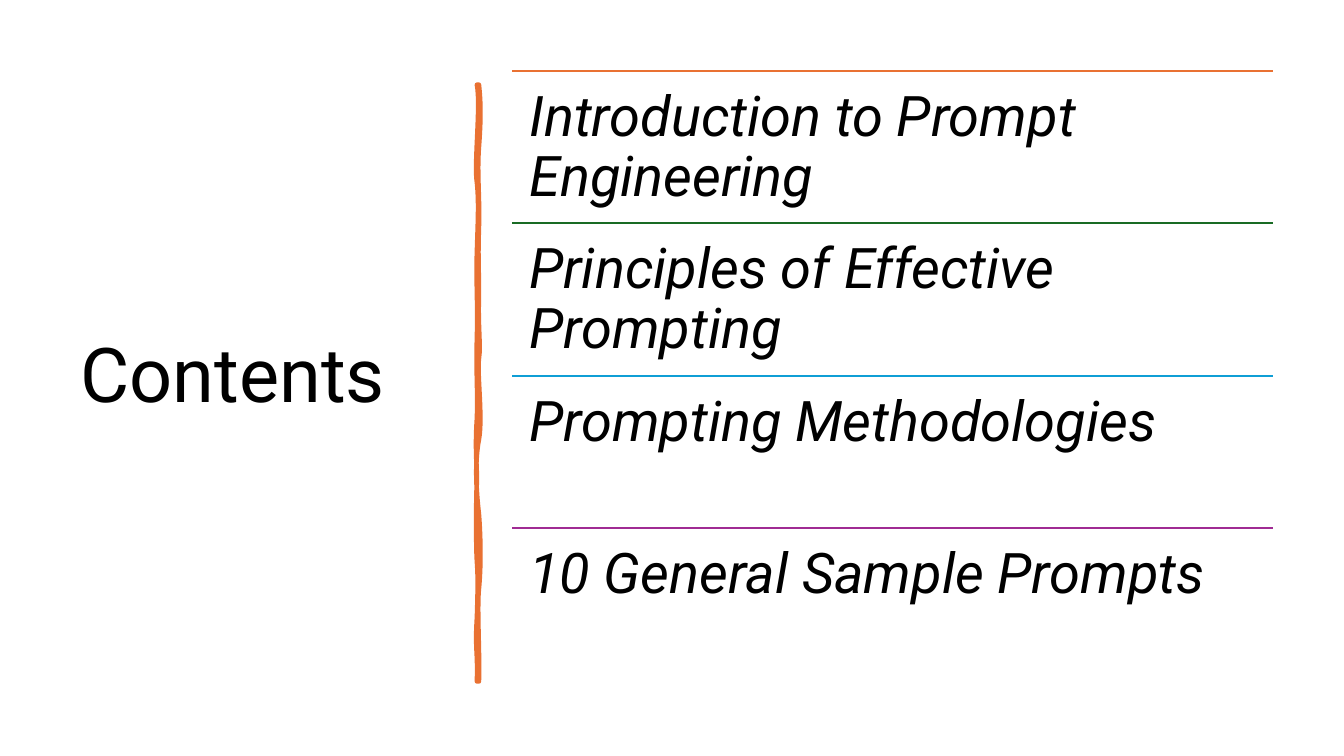
import math
from dataclasses import dataclass

import pptx
import pptx.dml.color
import pptx.enum.shapes
import pptx.enum.text
import pptx.oxml.ns
import pptx.presentation
import pptx.slide
import pptx.util
from lxml import etree

PX = 9144  # EMU; 100 px to the inch


@dataclass(frozen=True)
class Theme:
    font: str = "Roboto"
    text: str = "000000"
    accent: str = "E97132"
    title_size: int = 54
    topic_size: int = 40
    rule_width: float = 1.5
    divider_width: float = 3.25


@dataclass(frozen=True)
class Topic:
    label: str
    color: str


@dataclass(frozen=True)
class Curve:
    """A cubic piece of the divider's edge: two controls and an end, in px."""
    x1: int
    y1: int
    x2: int
    y2: int
    x: int
    y: int


THEME = Theme()

TOPICS = [
    Topic("Introduction to Prompt Engineering", THEME.accent),
    Topic("Principles of Effective Prompting", "196B24"),
    Topic("Prompting Methodologies", "0F9ED5"),
    Topic("10 General Sample Prompts", "A02B93"),
]
TOPICS_LEFT, TOPICS_TOP, TOPICS_WIDTH, TOPICS_HEIGHT = 508, 70, 755, 605
TOPIC_INSET = 17

DIVIDER_LEFT, DIVIDER_RIGHT, DIVIDER_TOP = 473, 475, 84
DIVIDER_EDGE = [
    Curve(477, 102, 477, 119, 475, 146),
    Curve(473, 173, 476, 195, 475, 226),
    Curve(474, 257, 475, 262, 475, 294),
    Curve(474, 325, 477, 342, 475, 356),
    Curve(473, 370, 479, 414, 475, 436),
    Curve(471, 457, 472, 484, 475, 510),
    Curve(477, 536, 477, 564, 475, 584),
    Curve(473, 603, 476, 650, 475, 676),
    Curve(474, 676, 473, 676, 473, 676),
    Curve(474, 646, 471, 644, 473, 613),
    Curve(474, 583, 474, 570, 473, 557),
    Curve(472, 544, 472, 495, 473, 477),
    Curve(473, 459, 471, 445, 473, 415),
    Curve(474, 386, 472, 373, 473, 335),
    Curve(474, 298, 472, 281, 473, 250),
    Curve(474, 218, 475, 200, 473, 181),
    Curve(470, 163, 477, 104, 473, 84),
]


def px(length: int) -> pptx.util.Emu:
    return pptx.util.Emu(length * PX)


def rgb(color: str) -> pptx.dml.color.RGBColor:
    return pptx.dml.color.RGBColor.from_string(color)


def add_text(slide: pptx.slide.Slide, text: str, left: int, top: int,
             width: int, height: int, *, size: int, inset_x: int = 10,
             inset_y: int = 5, italic: bool = False,
             anchor=pptx.enum.text.MSO_ANCHOR.TOP) -> None:
    frame = slide.shapes.add_textbox(
        px(left), px(top), px(width), px(height)).text_frame
    frame.word_wrap = True
    frame.vertical_anchor = anchor
    frame.margin_left = frame.margin_right = px(inset_x)
    frame.margin_top = frame.margin_bottom = px(inset_y)
    paragraph = frame.paragraphs[0]
    paragraph.line_spacing = 0.9
    run = paragraph.add_run()
    run.text = text
    run.font.name = THEME.font
    run.font.size = pptx.util.Pt(size)
    run.font.italic = italic
    run.font.color.rgb = rgb(THEME.text)


def add_rule(slide: pptx.slide.Slide, left: int, top: int, width: int,
             color: str) -> None:
    rule = slide.shapes.add_connector(
        pptx.enum.shapes.MSO_CONNECTOR.STRAIGHT,
        px(left), px(top), px(left + width), px(top))
    rule.line.color.rgb = rgb(color)
    rule.line.width = pptx.util.Pt(THEME.rule_width)
    etree.SubElement(rule.element.spPr, pptx.oxml.ns.qn("a:effectLst"))


def bend(segment: etree.ElementBase, curve: Curve) -> None:
    """Turn a straight outline segment into a cubic curve."""
    segment.tag = pptx.oxml.ns.qn("a:cubicBezTo")
    for point in list(segment):
        segment.remove(point)
    for x, y in ((curve.x1, curve.y1), (curve.x2, curve.y2),
                 (curve.x, curve.y)):
        etree.SubElement(segment, pptx.oxml.ns.qn("a:pt"),
                         x=str(px(x - DIVIDER_LEFT)),
                         y=str(px(y - DIVIDER_TOP)))


def add_divider(slide: pptx.slide.Slide) -> None:
    builder = slide.shapes.build_freeform(px(DIVIDER_RIGHT), px(DIVIDER_TOP))
    builder.add_line_segments(
        [(px(curve.x), px(curve.y)) for curve in DIVIDER_EDGE], close=False)
    builder.add_line_segments([], close=True)
    divider = builder.convert_to_shape()
    segments = list(divider.element.iter(pptx.oxml.ns.qn("a:lnTo")))
    for segment, curve in zip(segments, DIVIDER_EDGE):
        bend(segment, curve)
    for closing in segments[len(DIVIDER_EDGE):]:
        closing.getparent().remove(closing)
    divider.shadow.inherit = False
    divider.fill.solid()
    divider.fill.fore_color.rgb = rgb(THEME.accent)
    divider.line.color.rgb = rgb(THEME.accent)
    divider.line.width = pptx.util.Pt(THEME.divider_width)
    outline = divider.element.spPr.find(pptx.oxml.ns.qn("a:ln"))
    etree.SubElement(outline, pptx.oxml.ns.qn("a:round"))


def add_topics(slide: pptx.slide.Slide) -> None:
    row_height = TOPICS_HEIGHT / len(TOPICS)
    for row, topic in enumerate(TOPICS):
        top = TOPICS_TOP + math.floor(row * row_height + 0.5)
        add_rule(slide, TOPICS_LEFT, top, TOPICS_WIDTH, topic.color)
        add_text(slide, topic.label, TOPICS_LEFT, top, TOPICS_WIDTH,
                 round(row_height), size=THEME.topic_size, italic=True,
                 inset_x=TOPIC_INSET, inset_y=TOPIC_INSET)


def main() -> None:
    deck = pptx.Presentation()
    deck.slide_width, deck.slide_height = px(1333), px(750)
    slide = deck.slides.add_slide(deck.slide_layouts[6])
    add_text(slide, "Contents", 70, 69, 374, 611, size=THEME.title_size,
             anchor=pptx.enum.text.MSO_ANCHOR.MIDDLE)
    add_divider(slide)
    add_topics(slide)
    deck.save("out.pptx")


if __name__ == "__main__":
    main()
